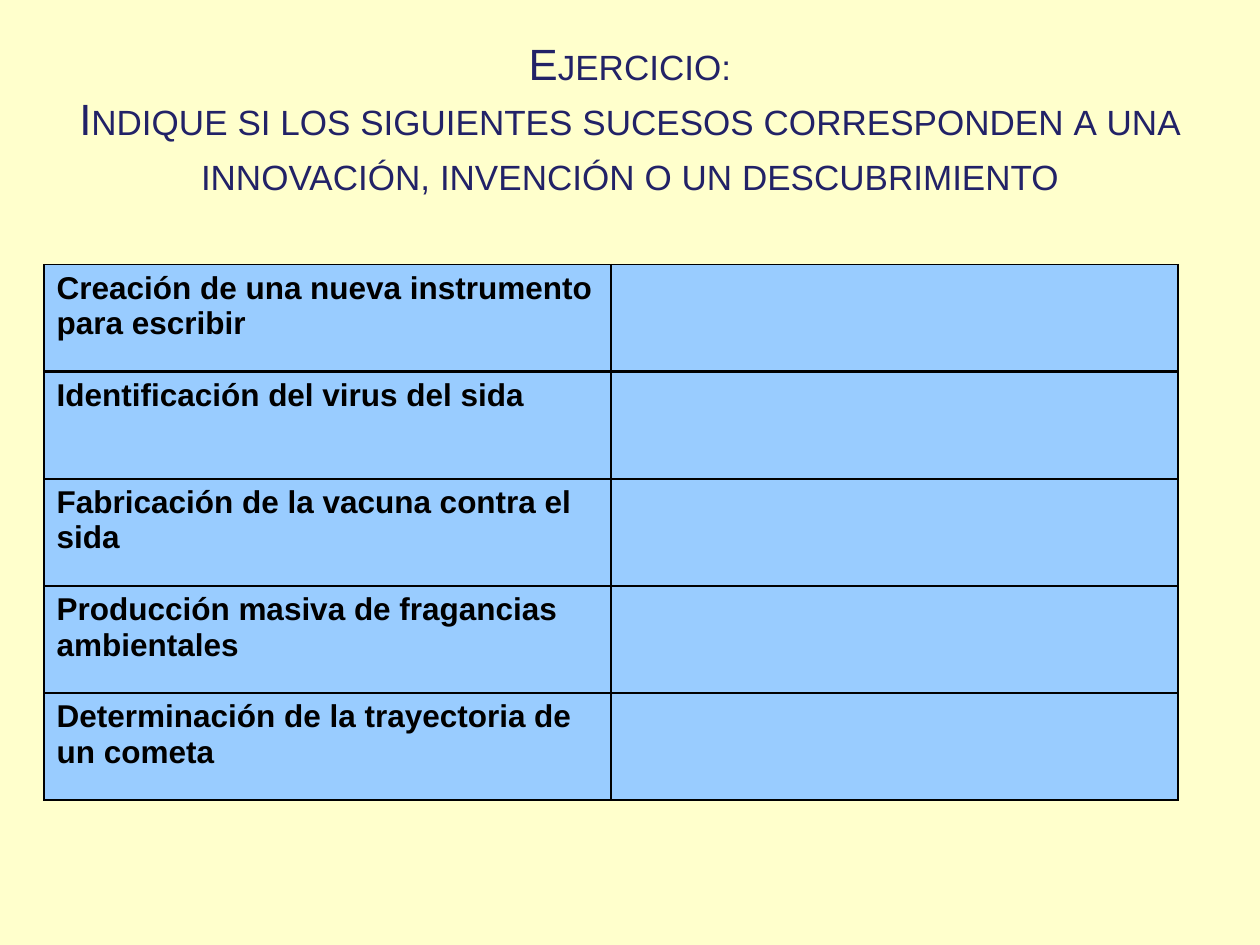
from dataclasses import dataclass

from lxml.etree import SubElement
from pptx import Presentation
from pptx.dml.color import RGBColor
from pptx.enum.text import MSO_ANCHOR, MSO_AUTO_SIZE, PP_ALIGN
from pptx.oxml.ns import qn
from pptx.util import Inches, Pt

COLORS = {"page": "FFFFCC", "title": "222267", "cell": "99CCFF", "ink": "000000"}
FONT = "Arial"
TITLE = [
    "Ejercicio:",
    "Indique si los siguientes sucesos corresponden a una "
    "innovación, invención o un descubrimiento",
]


@dataclass
class Event:
    text: str
    top: float = 1
    base: float = 1


EVENTS = [
    Event("Creación de una nueva instrumento para escribir", base=2),
    Event("Identificación del virus del sida", top=2),
    Event("Fabricación de la vacuna contra el sida"),
    Event("Producción masiva de fragancias ambientales"),
    Event("Determinación de la trayectoria de un cometa"),
]


def color(name: str) -> RGBColor:
    return RGBColor.from_string(COLORS[name])


def add_run(para, text: str, size: float, ink: str, bold: bool = False):
    run = para.add_run()
    run.text = text
    font = run.font
    font.name, font.size, font.bold = FONT, Pt(size), bold
    font.color.rgb = color(ink)
    return run


def add_edge(cell, side: str, width: float) -> None:
    props = cell._tc.get_or_add_tcPr()
    line = SubElement(props, qn(f"a:{side}"), w=str(Pt(width)))
    fill = SubElement(line, qn("a:solidFill"))
    SubElement(fill, qn("a:srgbClr"), val=COLORS["ink"])


def style_cell(cell, event: Event) -> None:
    # Borders precede the fill in the cell properties
    edges = {"lnL": 1, "lnR": 1, "lnT": event.top, "lnB": event.base}
    for side, width in edges.items():
        add_edge(cell, side, width)
    cell.fill.solid()
    cell.fill.fore_color.rgb = color("cell")


def draw_title(slide) -> None:
    title = slide.shapes.title
    title.left, title.top = Inches(0.5), Inches(0.3)
    title.width, title.height = Inches(9), Inches(1.25)
    frame = title.text_frame
    frame.word_wrap = True
    frame.auto_size = MSO_AUTO_SIZE.NONE
    frame.vertical_anchor = MSO_ANCHOR.MIDDLE
    frame.margin_left = frame.margin_right = Inches(0.05)
    para = frame.paragraphs[0]
    para.alignment = PP_ALIGN.CENTER
    para.line_spacing = 1.05
    for index, text in enumerate(TITLE):
        if index:
            para.add_line_break()
        run = add_run(para, text, 25, "title")
        run.font._element.set("cap", "small")


def draw_table(slide) -> None:
    frame = slide.shapes.add_table(
        len(EVENTS), 2, Inches(0.35), Inches(2.1),
        Inches(9), Inches(0.85 * len(EVENTS)),
    )
    table = frame.table
    table.first_row = table.horz_banding = False
    for row, event in zip(table.rows, EVENTS):
        for cell in row.cells:
            style_cell(cell, event)
        para = row.cells[0].text_frame.paragraphs[0]
        add_run(para, event.text, 18, "ink", bold=True)


def main() -> None:
    deck = Presentation()
    deck.slide_width, deck.slide_height = Inches(10), Inches(7.5)
    slide = deck.slides.add_slide(deck.slide_layouts[5])
    slide.background.fill.solid()
    slide.background.fill.fore_color.rgb = color("page")
    draw_title(slide)
    draw_table(slide)
    deck.save("out.pptx")


if __name__ == "__main__":
    main()
